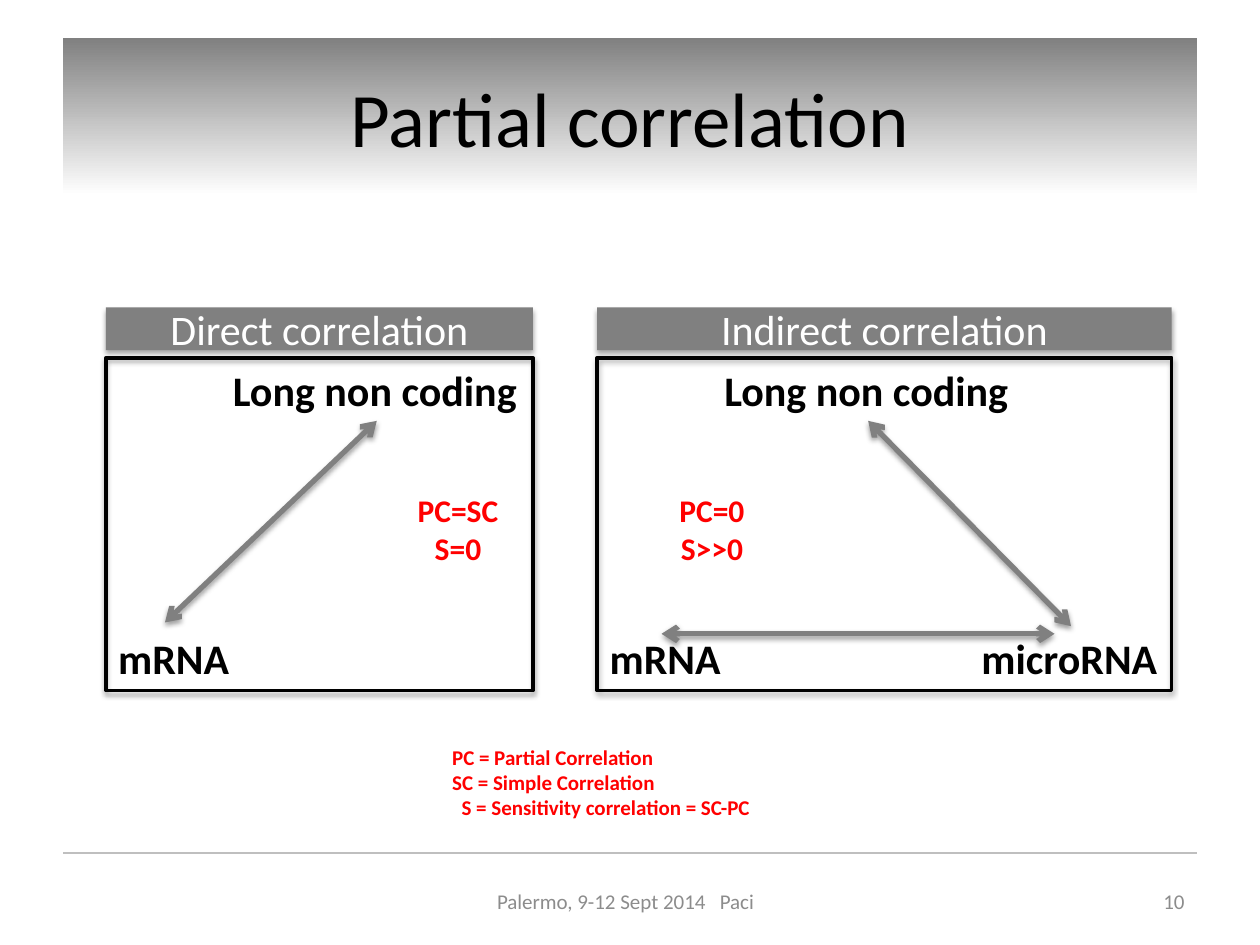
from lxml import etree
from pptx import Presentation
from pptx.dml.color import RGBColor
from pptx.enum import shapes, text
from pptx.oxml import parse_xml
from pptx.oxml.ns import nsdecls, qn
from pptx.util import Pt

BLACK = RGBColor(0x00, 0x00, 0x00)
WHITE = RGBColor(0xFF, 0xFF, 0xFF)
GRAY = RGBColor(0x80, 0x80, 0x80)
RULE = RGBColor(0xBF, 0xBF, 0xBF)
FOOTER = RGBColor(0x8C, 0x8C, 0x8C)
RED = RGBColor(0xFF, 0x00, 0x00)
LEFT, CENTER, RIGHT = text.PP_ALIGN.LEFT, text.PP_ALIGN.CENTER, text.PP_ALIGN.RIGHT
RECT = shapes.MSO_SHAPE.RECTANGLE


def effects(blur=0, dist=0, angle=90, alpha=0):
    """Effect list with an outer shadow, or an empty one without blur."""
    shadow = (f'<a:outerShdw blurRad="{Pt(blur)}" dist="{Pt(dist)}" dir="{angle * 60000}" '
              f'rotWithShape="0"><a:srgbClr val="000000"><a:alpha val="{alpha * 1000}"/>'
              '</a:srgbClr></a:outerShdw>') if blur else ''
    return parse_xml(f'<a:effectLst {nsdecls("a")}>{shadow}</a:effectLst>')


def write(sp, content, size, color, align=LEFT, bold=False, wrap=True,
          anchor=text.MSO_ANCHOR.MIDDLE, shadow=False):
    tf = sp.text_frame
    tf.text = content
    tf.word_wrap = wrap
    tf.vertical_anchor = anchor
    for p in tf.paragraphs:
        p.alignment = align
        for r in p.runs:
            r.font.name, r.font.size, r.font.bold = "Calibri", Pt(size), bold
            r.font.color.rgb = color
            if shadow:
                fill = r.font._element.find(qn("a:solidFill"))
                fill.addnext(effects(4, 3, 45, 40))


prs = Presentation()
prs.slide_width, prs.slide_height = Pt(720), Pt(540)
s = prs.slides.add_slide(prs.slide_layouts[6])

# Footer rule
ln = s.shapes.add_connector(shapes.MSO_CONNECTOR.STRAIGHT, Pt(36), Pt(487.4), Pt(684), Pt(487.4))
ln.line.color.rgb, ln.line.width = RULE, Pt(1)
ln._element.spPr.append(effects())

# Title band
sp = s.shapes.add_shape(RECT, Pt(36), Pt(21.6), Pt(648), Pt(90))
sp.shadow.inherit = False
sp.line.fill.background()
sp.fill.gradient()
sp.fill.gradient_angle = 270
for stop, color in zip(sp.fill.gradient_stops, (GRAY, WHITE)):
    stop.color.rgb = color
write(sp, "Partial correlation", 44, BLACK, CENTER)

# Footer and slide number
for x, w, content, align in ((246.2, 228.2, "Palermo, 9-12 Sept 2014   Paci  ", CENTER),
                             (516.2, 167.8, "10", RIGHT)):
    sp = s.shapes.add_textbox(Pt(x), Pt(500.4), Pt(w), Pt(28.8))
    write(sp, content, 12, FOOTER, align)

# Node labels
for x, y, w, content in ((406.8, 204.5, 178.6, "Long non coding"),
                         (341.3, 357.8, 79.2, "mRNA"),
                         (553.7, 357.8, 116.6, "microRNA"),
                         (126, 204.5, 178.6, "Long non coding"),
                         (60.5, 357.8, 79.2, "mRNA")):
    sp = s.shapes.add_textbox(Pt(x), Pt(y), Pt(w), Pt(36.4))
    write(sp, content, 24, BLACK, bold=True, wrap=False, anchor=text.MSO_ANCHOR.TOP)

# Double-headed arrows
for x1, y1, x2, y2 in ((378, 362.2, 602.6, 362.2),
                       (496.1, 240.5, 612, 357.8),
                       (94.3, 355.7, 215.3, 240.5)):
    ln = s.shapes.add_connector(shapes.MSO_CONNECTOR.STRAIGHT, Pt(x1), Pt(y1), Pt(x2), Pt(y2))
    ln.line.color.rgb, ln.line.width = GRAY, Pt(3)
    for end in ("a:headEnd", "a:tailEnd"):
        etree.SubElement(ln.line._get_or_add_ln(), qn(end), type="arrow")
    ln._element.spPr.append(effects(3.1, 1.6, 90, 38))

# Panels: frame and heading bar
for x, w, heading in ((60.5, 244.1, "Direct correlation"),
                      (341.3, 328.3, "Indirect correlation")):
    frame = s.shapes.add_shape(RECT, Pt(x), Pt(204.5), Pt(w), Pt(190.1))
    frame.fill.background()
    frame.line.color.rgb, frame.line.width = BLACK, Pt(2)
    bar = s.shapes.add_shape(RECT, Pt(x), Pt(175.7), Pt(w), Pt(24.5))
    bar.fill.solid()
    bar.fill.fore_color.rgb = GRAY
    bar.line.fill.background()
    write(bar, heading, 24, WHITE, CENTER)
    for sp in (frame, bar):
        sp._element.spPr.append(effects(3.1, 1.8, 90, 35))

# Red values and legend
for x, y, w, size, align, content in (
        (231.1, 277.2, 61.2, 18, CENTER, "PC=SC\nS=0"),
        (380.9, 277.2, 51.8, 18, CENTER, "PC=0\nS>>0"),
        (251.3, 421.9, 187.2, 12, LEFT, "PC = Partial Correlation\nSC = Simple Correlation\n"
                                        "S = Sensitivity correlation = SC-PC")):
    sp = s.shapes.add_textbox(Pt(x), Pt(y), Pt(w), Pt(51.1))
    write(sp, content, size, RED, align, True, False, text.MSO_ANCHOR.TOP, True)
# Indent the last legend line
sp.text_frame.paragraphs[-1]._p.get_or_add_pPr().set("marL", str(Pt(5.4)))

prs.save("out.pptx")
